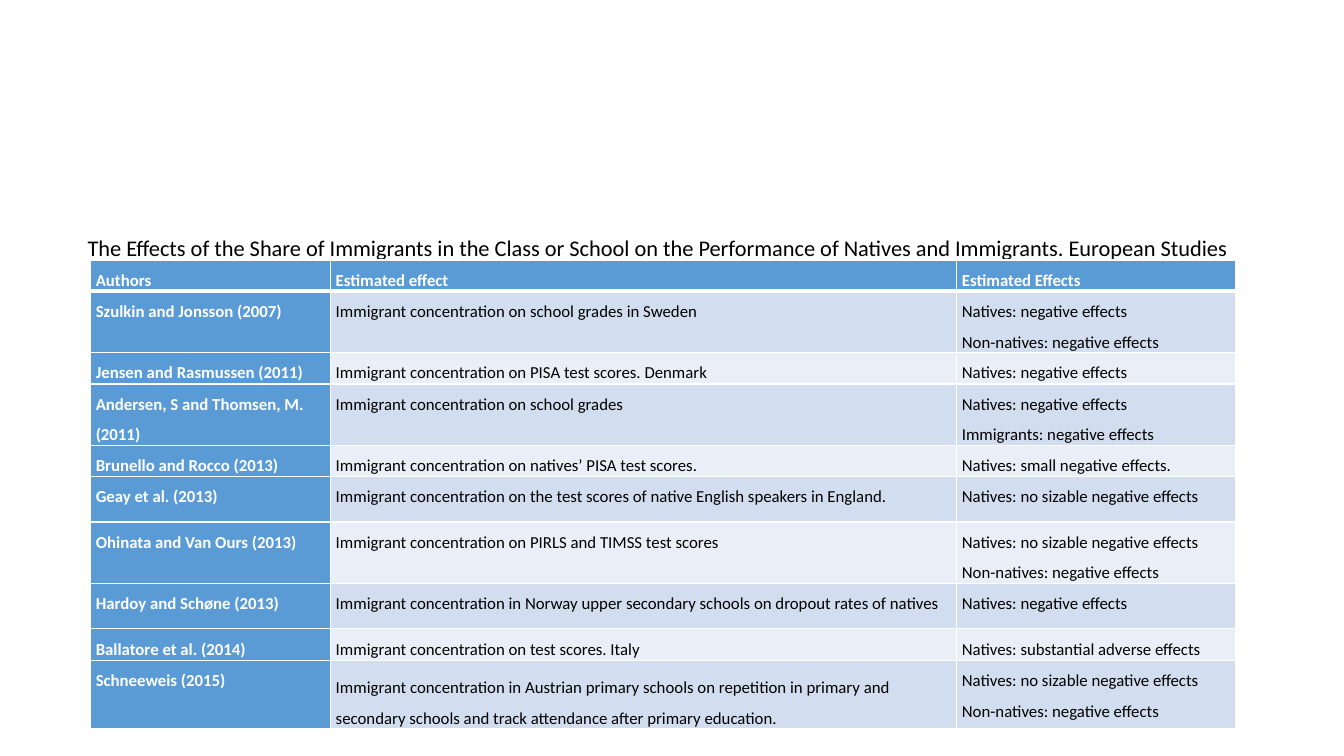
"""Build a slide tabulating European studies of immigrant share and school performance."""
from dataclasses import dataclass

from pptx import Presentation
from pptx.dml.color import RGBColor
from pptx.enum.text import MSO_ANCHOR, MSO_AUTO_SIZE, PP_ALIGN
from pptx.oxml.ns import qn
from pptx.slide import Slide
from pptx.table import _Cell as Cell
from pptx.util import Pt
from lxml.etree import SubElement

PX = 9144


@dataclass(frozen=True)
class Theme:
    font: str = "Calibri"
    title_size: int = 16
    cell_size: int = 12
    text: str = "000000"
    white: str = "FFFFFF"
    accent: str = "5B9BD5"
    bands: tuple[str, str] = ("D2DEEF", "EAEFF7")
    rule: int = 1
    header_rule: int = 3


@dataclass(frozen=True)
class Study:
    height: int
    authors: str
    subject: str
    effects: str
    subject_anchor: MSO_ANCHOR = MSO_ANCHOR.TOP
    effects_align: PP_ALIGN = PP_ALIGN.LEFT


THEME = Theme()
TITLE = ("The Effects of the Share of Immigrants in the Class or School on the "
         "Performance of Natives and Immigrants. European Studies")
COLUMNS = (238, 621, 277)
NEGATIVE = "Natives: negative effects"
NO_SIZABLE = "Natives: no sizable negative effects"
NON_NATIVES = "Non-natives: negative effects"
ROWS = (
    Study(31, "Authors", "Estimated effect", "Estimated Effects", MSO_ANCHOR.BOTTOM),
    Study(61, "Szulkin and Jonsson (2007)",
          "Immigrant concentration on school grades in Sweden",
          f"{NEGATIVE}\n{NON_NATIVES}"),
    Study(31, "Jensen and Rasmussen (2011)",
          "Immigrant concentration on PISA test scores. Denmark",
          NEGATIVE, effects_align=PP_ALIGN.JUSTIFY),
    Study(61, "Andersen, S and Thomsen, M. (2011)",
          "Immigrant concentration on school grades",
          f"{NEGATIVE}\nImmigrants: negative effects"),
    Study(31, "Brunello and Rocco (2013)",
          "Immigrant concentration on natives’ PISA test scores.",
          "Natives: small negative effects."),
    Study(45, "Geay et al. (2013)",
          "Immigrant concentration on the test scores of native English speakers in England.",
          NO_SIZABLE),
    Study(61, "Ohinata and Van Ours (2013)",
          "Immigrant concentration on PIRLS and TIMSS test scores",
          f"{NO_SIZABLE}\n{NON_NATIVES}"),
    Study(45, "Hardoy and Schøne (2013)",
          "Immigrant concentration in Norway upper secondary schools on dropout rates of natives",
          NEGATIVE),
    Study(31, "Ballatore et al. (2014)",
          "Immigrant concentration on test scores. Italy",
          "Natives: substantial adverse effects"),
    Study(68, "Schneeweis (2015)",
          "Immigrant concentration in Austrian primary schools on repetition in primary "
          "and secondary schools and track attendance after primary education.",
          f"{NO_SIZABLE}\n{NON_NATIVES}", MSO_ANCHOR.BOTTOM),
)


def add_title(s: Slide) -> None:
    """Add the caption above the table."""
    sp = s.shapes.add_textbox(77 * PX, 227 * PX, 1177 * PX, 37 * PX)
    tf = sp.text_frame
    tf.word_wrap = True
    tf.auto_size = MSO_AUTO_SIZE.SHAPE_TO_FIT_TEXT
    p = tf.paragraphs[0]
    p.text = TITLE
    p.alignment = PP_ALIGN.JUSTIFY
    p.font.name, p.font.size = THEME.font, Pt(THEME.title_size)
    p.font.color.rgb = RGBColor.from_string(THEME.text)


def add_borders(cell: Cell, row: int) -> None:
    """Rule all four sides, with a heavy rule under the header."""
    widths = {"lnL": THEME.rule, "lnR": THEME.rule,
              "lnT": THEME.header_rule if row == 1 else THEME.rule,
              "lnB": THEME.header_rule if row == 0 else THEME.rule}
    tc_pr = cell._tc.get_or_add_tcPr()
    for side, width in widths.items():
        ln = SubElement(tc_pr, qn(f"a:{side}"), w=str(Pt(width)))
        fill = SubElement(ln, qn("a:solidFill"))
        SubElement(fill, qn("a:srgbClr"), val=THEME.white)


def fill_cell(cell: Cell, text: str, row: int, column: int,
              anchor: MSO_ANCHOR, align: PP_ALIGN) -> None:
    """Write and style one table cell."""
    heading = row == 0 or column == 0
    add_borders(cell, row)
    cell.fill.solid()
    fill = THEME.accent if heading else THEME.bands[(row - 1) % 2]
    cell.fill.fore_color.rgb = RGBColor.from_string(fill)
    cell.margin_left = cell.margin_right = 5 * PX
    cell.margin_top = cell.margin_bottom = 0
    cell.vertical_anchor = anchor
    cell.text = text
    for p in cell.text_frame.paragraphs:
        p.alignment = align
        p.line_spacing = 1.5
        p.font.name, p.font.size = THEME.font, Pt(THEME.cell_size)
        p.font.bold = heading
        p.font.color.rgb = RGBColor.from_string(THEME.white if heading else THEME.text)


def add_studies(s: Slide) -> None:
    """Add the table of studies."""
    height = sum(study.height for study in ROWS)
    table = s.shapes.add_table(len(ROWS), len(COLUMNS), 90 * PX, 258 * PX,
                               sum(COLUMNS) * PX, height * PX).table
    table.first_col = True
    for column, width in zip(table.columns, COLUMNS):
        column.width = width * PX
    for i, study in enumerate(ROWS):
        table.rows[i].height = study.height * PX
        cells = (
            (study.authors, MSO_ANCHOR.TOP, PP_ALIGN.LEFT),
            (study.subject, study.subject_anchor, PP_ALIGN.LEFT),
            (study.effects, MSO_ANCHOR.TOP, study.effects_align),
        )
        for j, (text, anchor, align) in enumerate(cells):
            fill_cell(table.cell(i, j), text, i, j, anchor, align)


def main() -> None:
    """Build and save the slide."""
    prs = Presentation()
    prs.slide_width, prs.slide_height = 1333 * PX, 750 * PX
    s = prs.slides.add_slide(prs.slide_layouts[6])
    add_title(s)
    add_studies(s)
    prs.save("out.pptx")


if __name__ == "__main__":
    main()
